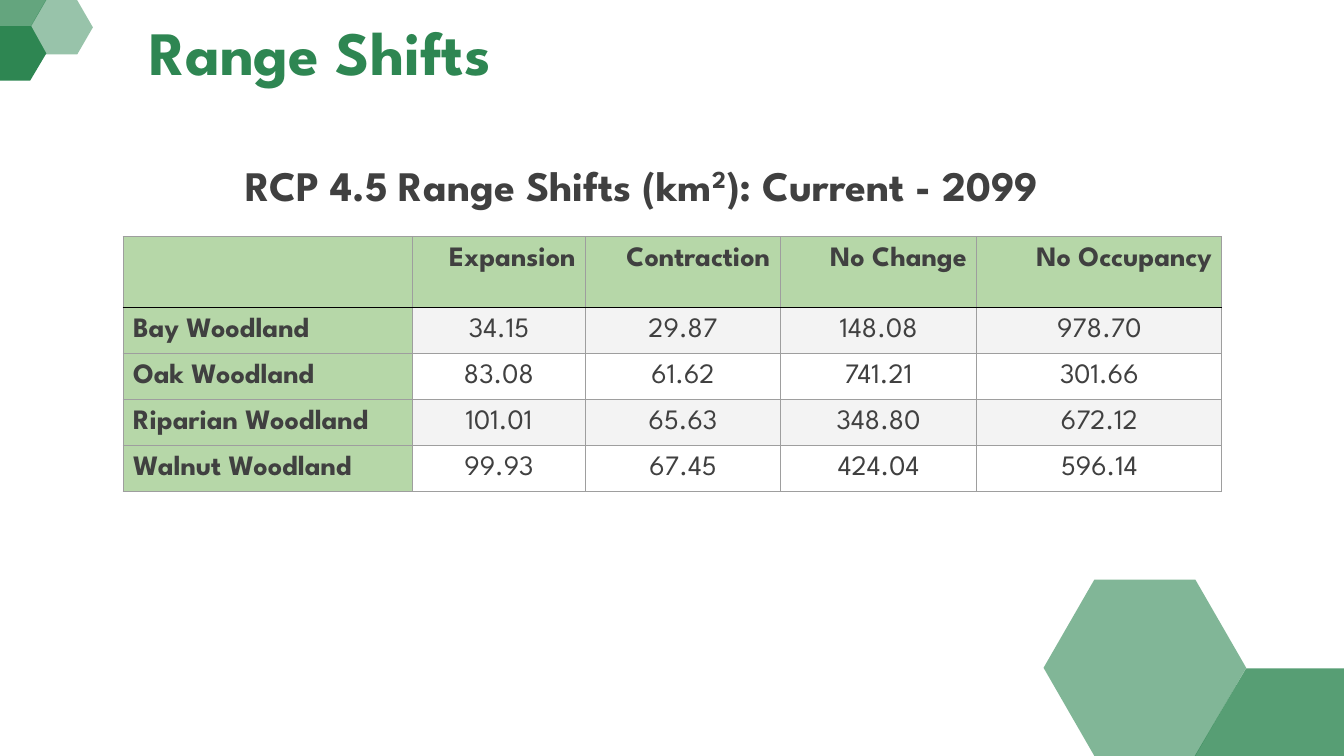
import lxml.etree
import pptx
import pptx.dml.color
import pptx.enum.shapes
import pptx.enum.text
import pptx.oxml.ns
import pptx.util

Inches = pptx.util.Inches
Pt = pptx.util.Pt
RGBColor = pptx.dml.color.RGBColor
PP_ALIGN = pptx.enum.text.PP_ALIGN
MSO_ANCHOR = pptx.enum.text.MSO_ANCHOR
qn = pptx.oxml.ns.qn

GREEN = RGBColor(0x2E, 0x86, 0x52)
LIGHT_GREEN = RGBColor(0xB6, 0xD7, 0xA8)
PALE_GRAY = RGBColor(0xF3, 0xF3, 0xF3)
WHITE = RGBColor(0xFF, 0xFF, 0xFF)
BORDER_GRAY = RGBColor(0x9E, 0x9E, 0x9E)
BLACK = RGBColor(0x00, 0x00, 0x00)
TEXT_GRAY = RGBColor(0x40, 0x40, 0x40)
FONT = "League Spartan"


def paint_green(shape, opacity):
    """Fill with green at the given opacity in percent, without outline or shadow."""
    shape.shadow.inherit = False
    shape.line.fill.background()
    shape.fill.solid()
    shape.fill.fore_color.rgb = GREEN
    if opacity < 100:
        color = shape.fill._xPr.find(qn("a:solidFill"))[0]
        lxml.etree.SubElement(color, qn("a:alpha"), val=str(opacity * 1000))


def add_run(paragraph, text, size, color, bold=True):
    run = paragraph.add_run()
    run.text = text
    run.font.name = FONT
    run.font.size = Pt(size)
    run.font.bold = bold
    run.font.color.rgb = color
    return run


presentation = pptx.Presentation()
presentation.slide_width = Inches(13.33)
presentation.slide_height = Inches(7.5)
slide = presentation.slides.add_slide(presentation.slide_layouts[5])

# Corner hexagons: left, top, width, height, rotation, opacity
for left, top, width, height, rotation, opacity in [
    (0.3, 0, 0.62, 0.54, 120, 49),
    (10.35, 5.75, 2.01, 1.75, 0, 60),
]:
    hexagon = slide.shapes.add_shape(
        pptx.enum.shapes.MSO_SHAPE.HEXAGON,
        Inches(left), Inches(top), Inches(width), Inches(height))
    hexagon.adjustments[0] = 0.288
    hexagon.rotation = rotation
    paint_green(hexagon, opacity)

# Hexagons cut off by the slide edges: corners, opacity
for corners, opacity in [
    ([(11.85, 7.5), (12.36, 6.63), (13.33, 6.63), (13.33, 7.5)], 80),
    ([(0, 0.26), (0.31, 0.26), (0.46, 0.53), (0.3, 0.8), (0, 0.8)], 100),
    ([(0, 0), (0.46, 0), (0.31, 0.26), (0, 0.26)], 74),
]:
    points = [(Inches(x), Inches(y)) for x, y in corners]
    builder = slide.shapes.build_freeform(*points[0])
    builder.add_line_segments(points[1:], close=True)
    paint_green(builder.convert_to_shape(), opacity)

title = slide.shapes.title
title.left, title.top = Inches(1.38), Inches(0.31)
title.width, title.height = Inches(11.42), Inches(0.49)
title.text_frame.vertical_anchor = MSO_ANCHOR.MIDDLE
title.text_frame.auto_size = pptx.enum.text.MSO_AUTO_SIZE.NONE
title_paragraph = title.text_frame.paragraphs[0]
title_paragraph.alignment = PP_ALIGN.LEFT
title_paragraph.line_spacing = 0.9
add_run(title_paragraph, "Range Shifts", 44, GREEN)

rows = [
    ("", "Expansion", "Contraction", "No Change", "No Occupancy"),
    ("Bay Woodland", "34.15", "29.87", "148.08", "978.70"),
    ("Oak Woodland", "83.08", "61.62", "741.21", "301.66"),
    ("Riparian Woodland", "101.01", "65.63", "348.80", "672.12"),
    ("Walnut Woodland", "99.93", "67.45", "424.04", "596.14"),
]
column_widths = [2.87, 1.72, 1.93, 1.95, 2.43]
row_heights = [0.7] + [0.45] * 4
table = slide.shapes.add_table(
    len(rows), len(column_widths), Inches(1.22), Inches(2.35),
    Inches(sum(column_widths)), Inches(sum(row_heights))).table
table.first_row = False
table.horz_banding = False
for column, width in zip(table.columns, column_widths):
    column.width = Inches(width)
for row, height in zip(table.rows, row_heights):
    row.height = Inches(height)

for row_index, row in enumerate(rows):
    for column_index, text in enumerate(row):
        cell = table.cell(row_index, column_index)
        cell.margin_left = cell.margin_right = Inches(0.1)
        cell.margin_top = cell.margin_bottom = Inches(0.1)
        is_heading = row_index == 0 or column_index == 0

        borders = {"L": BORDER_GRAY, "R": BORDER_GRAY,
                   "T": BLACK if row_index == 1 else BORDER_GRAY,
                   "B": BLACK if row_index == 0 else BORDER_GRAY}
        properties = cell._tc.get_or_add_tcPr()
        for side, color in borders.items():
            line = lxml.etree.SubElement(properties, qn("a:ln" + side), w=str(Pt(0.75)))
            line_fill = lxml.etree.SubElement(line, qn("a:solidFill"))
            lxml.etree.SubElement(line_fill, qn("a:srgbClr"), val=str(color))

        cell.fill.solid()
        if is_heading:
            cell.fill.fore_color.rgb = LIGHT_GREEN
        else:
            cell.fill.fore_color.rgb = PALE_GRAY if row_index % 2 else WHITE

        if text:
            paragraph = cell.text_frame.paragraphs[0]
            if row_index == 0:
                paragraph.alignment = PP_ALIGN.RIGHT
            else:
                paragraph.alignment = PP_ALIGN.CENTER if column_index else PP_ALIGN.LEFT
            add_run(paragraph, text, 20, TEXT_GRAY, is_heading)

caption = slide.shapes.add_textbox(Inches(2.34), Inches(1.48), Inches(8.66), Inches(0.68))
caption_frame = caption.text_frame
caption_frame.word_wrap = True
caption_frame.margin_left = caption_frame.margin_right = Inches(0.1)
caption_frame.margin_top = caption_frame.margin_bottom = Inches(0.1)
caption_paragraph = caption_frame.paragraphs[0]
add_run(caption_paragraph, "RCP 4.5 Range Shifts (km", 30, TEXT_GRAY)
superscript = add_run(caption_paragraph, "2", 30, TEXT_GRAY)
superscript._r.get_or_add_rPr().set("baseline", "30000")
add_run(caption_paragraph, "): Current - 2099", 30, TEXT_GRAY)

presentation.save("out.pptx")
